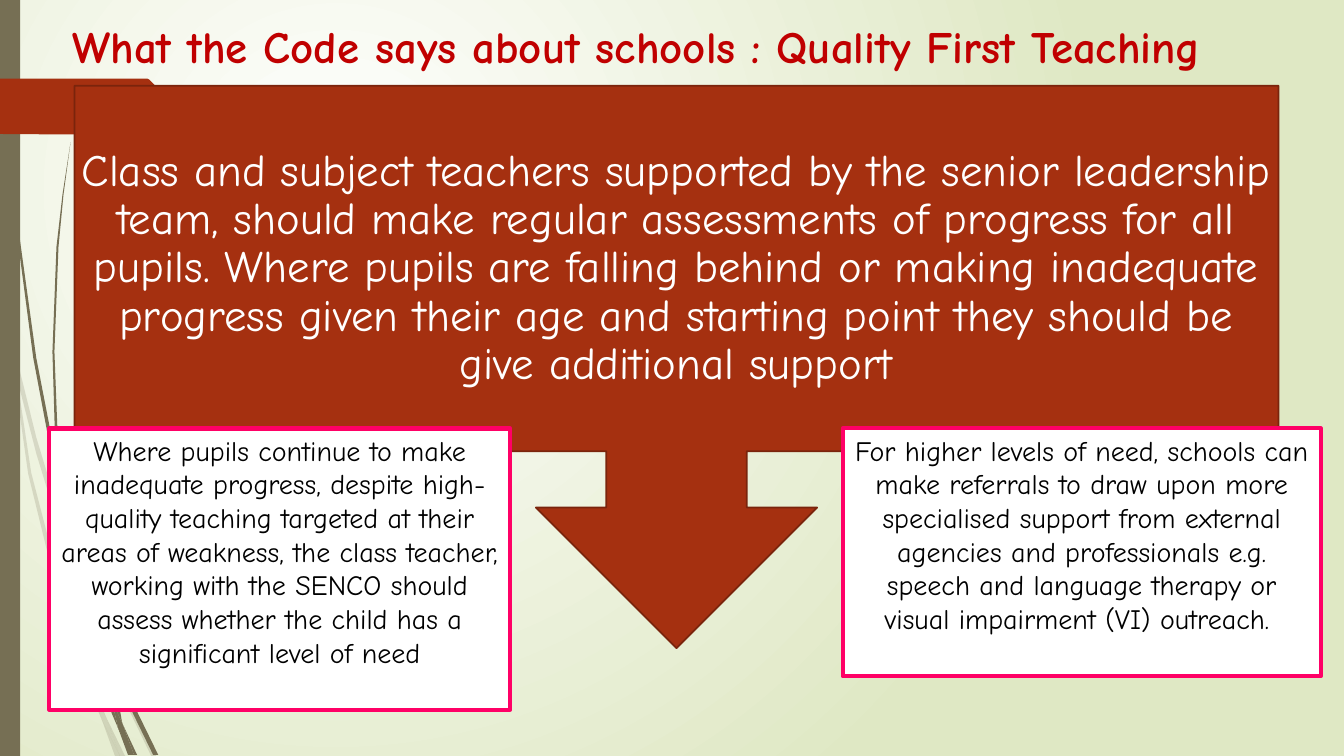
from lxml import etree
from pptx import Presentation
from pptx.dml.color import RGBColor
from pptx.enum.shapes import MSO_SHAPE
from pptx.enum.text import MSO_ANCHOR, PP_ALIGN
from pptx.oxml.ns import qn
from pptx.util import Inches, Pt

RUST, BROWN, PINK = "A53010", "766F54", "FF0066"
WHITE, BLACK = "FFFFFF", "000000"

# Outline vertices in inches
PALE_WISPS = [
    [(0.11, 3.5), (0.09, 3.22), (0, 2.82), (0, 2.99), (0.1, 3.44)],
    [(0.58, 5.22), (0.84, 5.99), (0.85, 5.86), (0.62, 5.2), (0.36, 4.34), (0.14, 3.45),
     (0.17, 3.76), (0.36, 4.5)],
    [(0.92, 6.07), (0.88, 5.96), (0.88, 6.1), (1.23, 6.94), (1.5, 7.5), (1.55, 7.5),
     (1.27, 6.92)],
    [(1.19, 7.5), (1.24, 7.5), (1.05, 7.11)],
    [(0.93, 6.83), (0.7, 6.19), (0.31, 4.69), (0.17, 3.76), (0.11, 3.5), (0.28, 4.7),
     (0.65, 6.21), (0.92, 6.93), (1.01, 7.14), (0.99, 7.07)],
    [(0.84, 5.99), (0.87, 6.46), (0.93, 6.83), (0.96, 6.92), (1.05, 7.11), (1.03, 7.06),
     (0.91, 6.46), (0.88, 6.1), (0.88, 6.08)],
    [(0.88, 5.84), (1.1, 4.62), (1.6, 3.49), (2.29, 2.45), (2.68, 1.98), (2.9, 1.75),
     (3.12, 1.54), (3.12, 1.53), (2.89, 1.75), (2.68, 1.97), (2.28, 2.44), (1.58, 3.48),
     (1.07, 4.61), (0.85, 5.84), (0.85, 5.86), (0.88, 5.96)],
    [(1.01, 7.14), (1.14, 7.5), (1.19, 7.5)],
    [(0.96, 6.92), (0.93, 6.83), (0.99, 7.07), (1.01, 7.14), (1.19, 7.5), (1.05, 7.11)],
]
DARK_WISPS = [
    [(0.07, 1.1), (0.17, 2.33), (0.33, 3.55), (0.56, 4.77), (0.57, 4.81), (0.55, 4.57),
     (0.55, 4.53), (0.36, 3.55), (0.19, 2.32), (0.08, 1.09), (0.05, 0.48), (0.04, 0),
     (0.03, 0), (0.04, 0.48)],
    [(1.13, 6.49), (1.1, 6.41), (1.11, 6.56), (1.32, 7.08), (1.52, 7.49), (1.57, 7.49),
     (1.36, 7.06)],
    [(1.1, 6.91), (0.98, 6.57), (0.72, 5.56), (0.64, 5.05), (0.57, 4.77), (0.68, 5.57),
     (0.93, 6.59), (1.11, 7.08), (1.17, 7.22), (1.16, 7.17)],
    [(0.6, 4.72), (0.58, 4.53), (0.54, 3.49), (0.58, 2.45), (0.63, 1.93), (0.7, 1.41),
     (0.62, 1.93), (0.56, 2.45), (0.52, 3.49), (0.55, 4.49)],
    [(1.33, 7.49), (1.36, 7.49), (1.22, 7.19)],
    [(1.11, 6.33), (1.25, 5.52), (1.58, 4.76), (2.05, 4.06), (2.31, 3.74), (2.45, 3.59),
     (2.61, 3.44), (2.6, 3.44), (2.45, 3.58), (2.31, 3.73), (2.04, 4.05), (1.56, 4.74),
     (1.22, 5.51), (1.06, 6.31), (1.1, 6.41)],
    [(1.17, 7.22), (1.27, 7.49), (1.31, 7.49)],
    [(1.06, 6.45), (1.1, 6.91), (1.16, 7.06), (1.22, 7.19), (1.21, 7.16), (1.11, 6.56),
     (1.09, 6.51)],
    [(1.16, 7.06), (1.1, 6.91), (1.16, 7.17), (1.17, 7.22), (1.3, 7.49), (1.33, 7.49),
     (1.22, 7.19)],
]
TAB = [(0, 0.78), (1.46, 0.78), (1.48, 0.79), (1.73, 1.04), (1.74, 1.06), (1.73, 1.08),
       (1.48, 1.33), (1.46, 1.34), (0, 1.33)]


def color(hex_code):
    return RGBColor.from_string(hex_code)


class SlideBuilder:
    def __init__(self, slide, font):
        self.slide = slide
        self.font = font

    def background(self, center, edge):
        fill = self.slide.background.fill
        fill.gradient()
        for stop, hex_code, position in zip(fill.gradient_stops, (center, edge), (0, 1)):
            stop.color.rgb = color(hex_code)
            stop.position = position
        gradient = self.slide.element.find(".//" + qn("a:gradFill"))
        linear = gradient.find(qn("a:lin"))
        radial = etree.Element(qn("a:path"), path="circle")
        etree.SubElement(radial, qn("a:fillToRect"),
                         l="50000", t="50000", r="100000", b="100000")
        gradient.replace(linear, radial)

    def paint(self, shape, fill, line=None, line_width=1, opacity=100):
        shape.shadow.inherit = False
        shape.fill.solid()
        shape.fill.fore_color.rgb = color(fill)
        if opacity < 100:
            fill_color = shape.element.spPr.find(".//" + qn("a:srgbClr"))
            etree.SubElement(fill_color, qn("a:alpha"), val=str(opacity * 1000))
        if line:
            shape.line.color.rgb = color(line)
            shape.line.width = Pt(line_width)
        else:
            shape.line.fill.background()

    def outline(self, points, fill, opacity=100):
        """Draw a closed filled polygon without a border."""
        corners = [(Inches(x), Inches(y)) for x, y in points]
        builder = self.slide.shapes.build_freeform(*corners[0], scale=1.0)
        builder.add_line_segments(corners[1:], close=True)
        self.paint(builder.convert_to_shape(), fill, opacity=opacity)

    def block(self, kind, box, fill, line=None, line_width=1):
        shape = self.slide.shapes.add_shape(kind, *map(Inches, box))
        self.paint(shape, fill, line, line_width)
        return shape

    def text_box(self, box):
        return self.slide.shapes.add_textbox(*map(Inches, box))

    def add_text(self, shape, text, size, hex_code, bold=False, align=PP_ALIGN.CENTER,
                 anchor=MSO_ANCHOR.TOP, side_margin=0.1, line_spacing=1.0):
        frame = shape.text_frame
        frame.word_wrap = True
        frame.vertical_anchor = anchor
        frame.margin_left = frame.margin_right = Inches(side_margin)
        paragraph = frame.paragraphs[0]
        paragraph.alignment = align
        paragraph.line_spacing = line_spacing
        run = paragraph.add_run()
        run.text = text
        run.font.name = self.font
        run.font.size = Pt(size)
        run.font.bold = bold
        run.font.color.rgb = color(hex_code)


def main():
    presentation = Presentation()
    presentation.slide_width = Inches(13.33)
    presentation.slide_height = Inches(7.5)
    slide = presentation.slides.add_slide(presentation.slide_layouts[6])
    builder = SlideBuilder(slide, "Comic Neue")

    builder.background(WHITE, "DFE8C4")
    for wisps, opacity in ((PALE_WISPS, 20), (DARK_WISPS, 100)):
        for wisp in wisps:
            builder.outline(wisp, BROWN, opacity)
    builder.block(MSO_SHAPE.RECTANGLE, (0, 0, 0.2, 7.5), BROWN)
    builder.outline(TAB, RUST)

    title = builder.text_box((0.62, 0.14, 12.47, 0.59))
    builder.add_text(title, "What the Code says about schools : Quality First Teaching",
                     32, "C00000", bold=True, align=PP_ALIGN.LEFT)

    callout = builder.block(MSO_SHAPE.DOWN_ARROW_CALLOUT, (0.74, 0.85, 11.94, 5.58),
                            RUST, "7A240C", 1.25)
    builder.add_text(
        callout,
        "Class and subject teachers supported by the senior leadership team, should make "
        "regular assessments of progress for all pupils. Where pupils are falling behind "
        "or making inadequate progress given their age and starting point they should be "
        "give additional support",
        32, WHITE, anchor=MSO_ANCHOR.MIDDLE, side_margin=0.06, line_spacing=0.9)

    next_steps = [
        ((0.49, 4.25, 4.57, 2.79),
         "Where pupils continue to make inadequate progress, despite high-quality teaching "
         "targeted at their areas of weakness, the class teacher, working with the SENCO "
         "should assess whether the child has a significant level of need"),
        ((8.36, 4.25, 4.74, 2.46),
         "For higher levels of need, schools can make referrals to draw upon more "
         "specialised support from external agencies and professionals e.g. speech and "
         "language therapy or visual impairment (VI) outreach. "),
    ]
    for box, text in next_steps:
        step = builder.block(MSO_SHAPE.RECTANGLE, box, WHITE, PINK, 3)
        builder.add_text(step, text, 20, BLACK)

    presentation.save("out.pptx")


if __name__ == "__main__":
    main()
